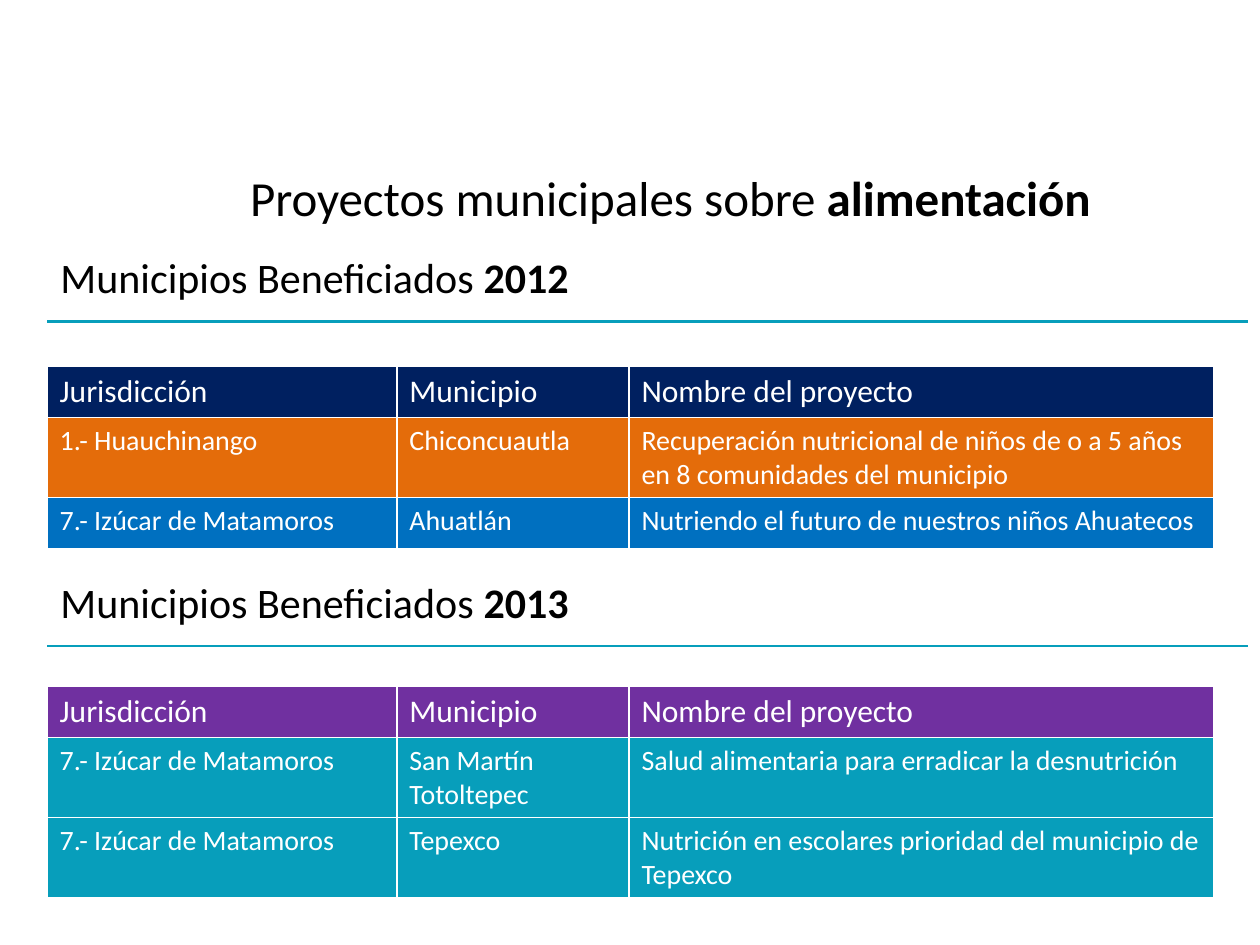
from lxml.etree import SubElement
from pptx import Presentation
from pptx.dml.color import RGBColor
from pptx.enum.shapes import MSO_CONNECTOR as Connector
from pptx.enum.text import MSO_ANCHOR as Anchor, PP_ALIGN as Align
from pptx.oxml.ns import qn
from pptx.util import Cm, Pt


def color(hex_text):
    return RGBColor.from_string(hex_text)


class ProjectSlide:
    """Holds the style and the current slide, and draws each kind of element."""

    font_name = "Calibri"
    ink, paper, accent = "000000", "FFFFFF", "079EBB"
    left = 0.95
    columns = (7.05, 4.68, 11.78)
    headers = ("Jurisdicción", "Municipio", "Nombre del proyecto")

    def __init__(self, deck):
        self.slide = deck.slides.add_slide(deck.slide_layouts[5])

    def add_run(self, paragraph, wording, size, hex_text, bold=False):
        run = paragraph.add_run()
        run.text = wording
        run.font.name = self.font_name
        run.font.size = Pt(size)
        run.font.bold = bold
        run.font.color.rgb = color(hex_text)

    def title(self, lead, emphasis):
        heading = self.slide.shapes.title
        heading.left, heading.top = Cm(3.84), Cm(3.25)
        heading.width, heading.height = Cm(19.35), Cm(1.45)
        frame = heading.text_frame
        frame.vertical_anchor = Anchor.MIDDLE
        paragraph = frame.paragraphs[0]
        paragraph.alignment = Align.CENTER
        self.add_run(paragraph, lead, 28, self.ink)
        self.add_run(paragraph, emphasis, 28, self.ink, bold=True)

    def subtitle(self, top, lead, year):
        box = self.slide.shapes.add_textbox(Cm(0.97), Cm(top), Cm(13.67), Cm(1.19))
        box.text_frame.word_wrap = True
        paragraph = box.text_frame.paragraphs[0]
        properties = paragraph._p.get_or_add_pPr()
        properties.set("marL", str(Cm(0.76)))
        properties.set("indent", str(Cm(-0.76)))
        self.add_run(paragraph, lead, 24, self.ink)
        self.add_run(paragraph, year, 24, self.ink, bold=True)

    def rule(self, top):
        line = self.slide.shapes.add_connector(
            Connector.STRAIGHT, Cm(self.left), Cm(top), Cm(25.15), Cm(top))
        line.line.color.rgb = color(self.accent)
        line.line.width = Pt(1.5)
        SubElement(line._element.spPr, qn("a:effectLst"))

    def table(self, top, projects, heights, fills):
        rows = (self.headers, *projects)
        table = self.slide.shapes.add_table(
            len(rows), len(self.columns), Cm(self.left), Cm(top),
            Cm(sum(self.columns)), Cm(sum(heights))).table
        table.horz_banding = False
        for column, width in zip(table.columns, self.columns):
            column.width = Cm(width)
        for index, (wordings, height, fill) in enumerate(zip(rows, heights, fills)):
            table.rows[index].height = Cm(height)
            size = 16 if index else 18
            for cell, wording in zip(table.rows[index].cells, wordings):
                cell.fill.solid()
                cell.fill.fore_color.rgb = color(fill)
                self.add_run(cell.text_frame.paragraphs[0], wording, size, self.paper)

    def year_section(self, top, year, table_top, projects, heights, fills):
        self.subtitle(top, "Municipios Beneficiados ", year)
        self.rule(top + 1.53)
        self.table(table_top, projects, heights, fills)


def main():
    deck = Presentation()
    deck.slide_width, deck.slide_height = Cm(25.4), Cm(19.05)
    page = ProjectSlide(deck)
    page.title("Proyectos municipales sobre ", "alimentación")
    page.year_section(
        4.95, "2012", 7.39,
        [("1.- Huauchinango", "Chiconcuautla",
          "Recuperación nutricional de niños de o a 5 años en 8 comunidades del municipio"),
         ("7.- Izúcar de Matamoros", "Ahuatlán",
          "Nutriendo el futuro de nuestros niños Ahuatecos")],
        (1.03, 1.61, 1.03), ("002060", "E46C0A", "0070C0"))
    page.year_section(
        11.49, "2013", 13.84,
        [("7.- Izúcar de Matamoros", "San Martín Totoltepec",
          "Salud alimentaria para erradicar la desnutrición"),
         ("7.- Izúcar de Matamoros", "Tepexco",
          "Nutrición en escolares prioridad del municipio de Tepexco")],
        (1.03, 1.61, 1.61), ("7030A0", page.accent, page.accent))
    deck.save("out.pptx")


if __name__ == "__main__":
    main()
